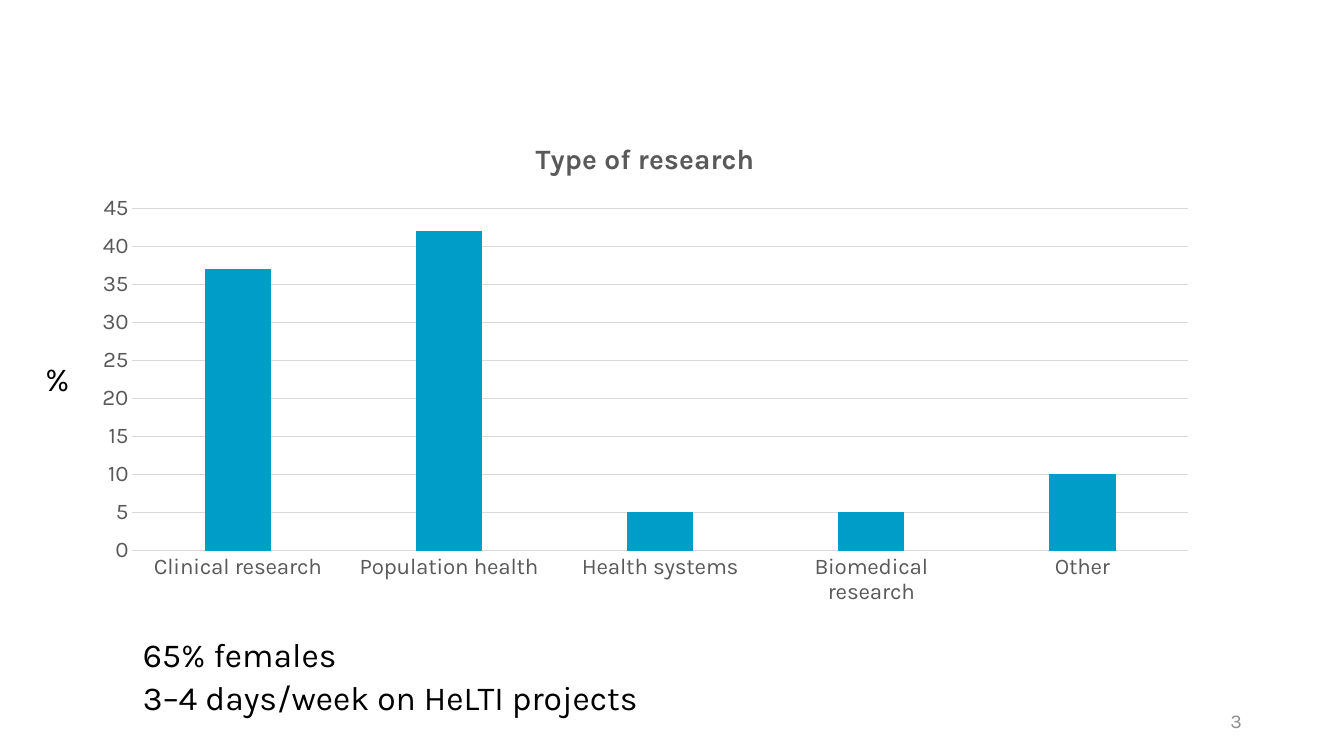
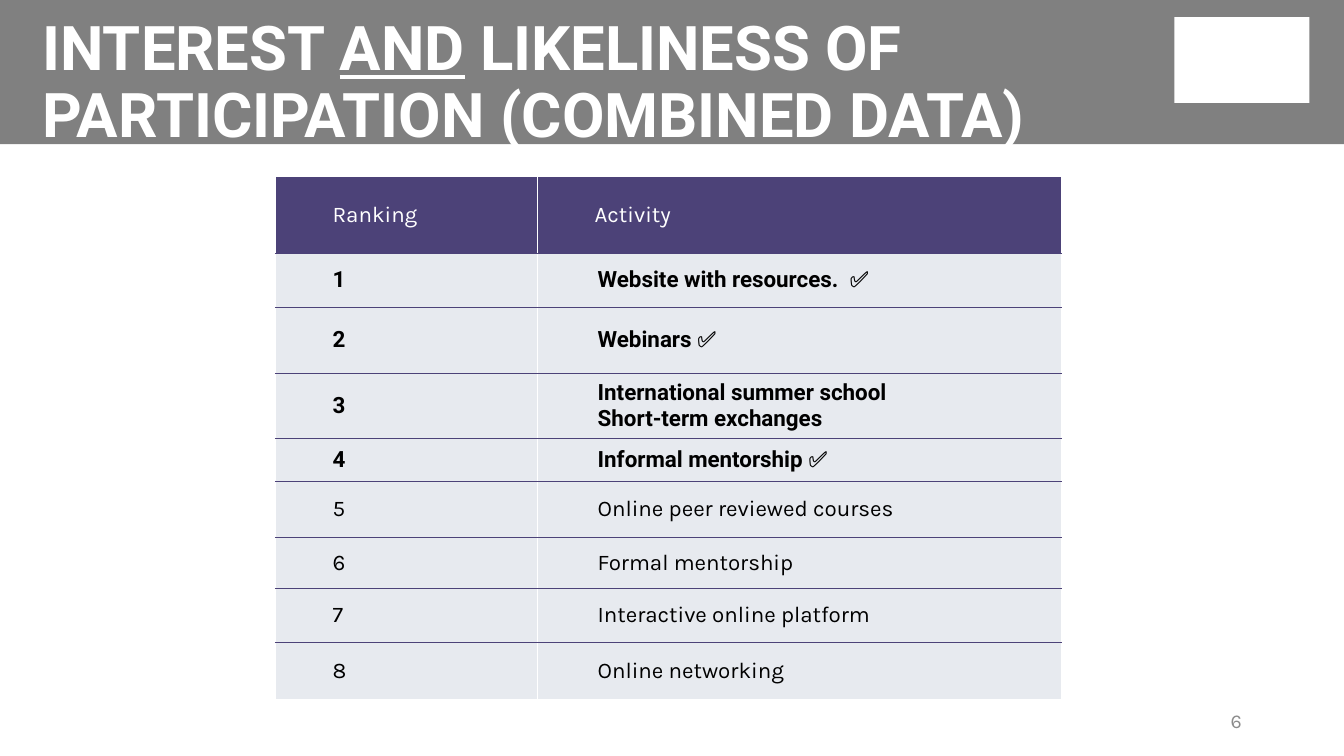
from lxml import etree
from pptx import Presentation
from pptx import util as u
from pptx.chart.data import CategoryChartData
from pptx.dml.color import RGBColor
from pptx.enum import chart as charts, shapes, text
from pptx.oxml.ns import qn

WIDTH, HEIGHT = u.Inches(13.33), u.Inches(7.5)
COLUMN, ROW = WIDTH / 40, HEIGHT / 30

WHITE, BLACK, GREY = "FFFFFF", "000000", "808080"
LABEL_GREY, GRID_GREY, NUMBER_GREY = "595959", "D9D9D9", "8C8C8C"
PURPLE, PALE, BLUE = "4C4278", "E7EAEF", "009DC8"
BODY_FONT, HEAVY_FONT = "Karla", "Roboto"
TITLE_ONLY, BLANK = 5, 6

RESEARCH = {
    "Clinical research": 37,
    "Population health": 42,
    "Health systems": 5,
    "Biomedical research": 5,
    "Other": 10,
}
# Row height in grid rows, then the activities that share the rank
ACTIVITIES = [
    (2.16, ["Website with resources.  ✅"]),
    (2.6, ["Webinars ✅"]),
    (2.6, ["International summer school", "Short-term exchanges"]),
    (1.68, ["Informal mentorship ✅"]),
    (2.24, ["Online peer reviewed courses"]),
    (2.04, ["Formal mentorship"]),
    (2.12, ["Interactive online platform"]),
    (2.28, ["Online networking"]),
]
TOP_RANKS = 4


def color(value):
    return RGBColor.from_string(value)


def place(left, top, width, height):
    """Turn grid columns and rows into slide lengths."""
    return (round(left * COLUMN), round(top * ROW),
            round(width * COLUMN), round(height * ROW))


def style(font, size, shade, name=BODY_FONT, bold=False):
    font.size, font.name, font.bold = u.Pt(size), name, bold
    font.color.rgb = color(shade)


def add_text(page, words, area, size=24, shade=BLACK, wrap=True,
             align=text.PP_ALIGN.LEFT, anchor=text.MSO_ANCHOR.TOP):
    frame = page.shapes.add_textbox(*place(*area)).text_frame
    frame.word_wrap, frame.vertical_anchor = wrap, anchor
    para = frame.paragraphs[0]
    para.text, para.alignment = words, align
    style(para.font, size, shade)


def add_page_number(page, number):
    add_text(page, number, (28.26, 27.8, 9, 1.6), 14, NUMBER_GREY,
             align=text.PP_ALIGN.RIGHT, anchor=text.MSO_ANCHOR.MIDDLE)


def add_block(page, area, fill):
    block = page.shapes.add_shape(shapes.MSO_SHAPE.RECTANGLE, *place(*area))
    block.shadow.inherit = False
    block.fill.solid()
    block.fill.fore_color.rgb = color(fill)
    block.line.fill.background()
    return block


def add_title_band(page, spans):
    """Put the grey band behind the title; spans are (words, underlined)."""
    title = page.shapes.title
    band = add_block(page, (0, 0, 40, 5.72), GREY)
    title._element.addprevious(band._element)
    title.left, title.top, title.width, title.height = place(0.96, 0.44, 34.5, 5.8)
    frame = title.text_frame
    frame.auto_size, frame.word_wrap = text.MSO_AUTO_SIZE.NONE, True
    frame.vertical_anchor = text.MSO_ANCHOR.MIDDLE
    para = frame.paragraphs[0]
    para.alignment, para.line_spacing = text.PP_ALIGN.LEFT, 0.9
    style(para.font, 44, WHITE, HEAVY_FONT, True)
    for words, underlined in spans:
        span = para.add_run()
        span.text, span.font.underline = words, underlined


def add_column_chart(page, name, values, area):
    data = CategoryChartData()
    data.categories = list(values)
    data.add_series(name, list(values.values()))
    chart = page.shapes.add_chart(charts.XL_CHART_TYPE.COLUMN_CLUSTERED,
                                  *place(*area), data).chart
    style(chart.font, 16, LABEL_GREY)
    chart.has_legend = False
    heading = chart.chart_title.text_frame.paragraphs[0]
    heading.text = name
    style(heading.font, 20, LABEL_GREY, bold=True)

    plot = chart.plots[0]
    plot.gap_width, plot.overlap, plot.vary_by_categories = 219, -27, False
    fill = plot.series[0].format.fill
    fill.solid()
    fill.fore_color.rgb = color(BLUE)

    for axis in (chart.category_axis, chart.value_axis):
        axis.major_tick_mark = axis.minor_tick_mark = charts.XL_TICK_MARK.NONE
        style(axis.tick_labels.font, 16, LABEL_GREY)
    scale = chart.value_axis
    scale.minimum_scale, scale.maximum_scale, scale.major_unit = 0, 45, 5
    scale.format.line.fill.background()
    for line in (chart.category_axis.format.line, scale.major_gridlines.format.line):
        line.color.rgb, line.width = color(GRID_GREY), u.Pt(0.75)


def add_border(cell, side, shade, points):
    line = etree.SubElement(cell._tc.get_or_add_tcPr(), qn(f"a:ln{side}"),
                            w=str(u.Pt(points)))
    fill = etree.SubElement(line, qn("a:solidFill"))
    etree.SubElement(fill, qn("a:srgbClr"), val=shade)


def fill_cell(cell, lines, fill, shade, font=BODY_FONT, bold=False,
              side_margin=0.07, bottom=PURPLE):
    for side, line_color, points in (("L", WHITE, 0.5), ("R", WHITE, 0.5),
                                     ("T", PURPLE, 0.25), ("B", bottom, 0.25)):
        add_border(cell, side, line_color, points)
    cell.fill.solid()
    cell.fill.fore_color.rgb = color(fill)
    cell.vertical_anchor = text.MSO_ANCHOR.MIDDLE
    cell.margin_left = cell.margin_right = u.Inches(side_margin)
    cell.margin_top = cell.margin_bottom = u.Inches(0.04)
    cell.text = "\n".join(lines)
    for para in cell.text_frame.paragraphs:
        para.level = 1
        properties = para._p.get_or_add_pPr()
        properties.set("marL", str(u.Inches(0.5)))
        properties.set("indent", "0")
        style(para.font, 16, shade, font, bold)


def add_ranking_table(page, left, top):
    widths = [7.8, 15.6]
    heights = [3] + [height for height, _ in ACTIVITIES]
    area = place(left, top, sum(widths), sum(heights))
    table = page.shapes.add_table(len(heights), len(widths), *area).table
    table.first_row = table.horz_banding = False
    for column, width in zip(table.columns, widths):
        column.width = round(width * COLUMN)
    for row, height in zip(table.rows, heights):
        row.height = round(height * ROW)

    for index, heading in enumerate(("Ranking", "Activity")):
        fill_cell(table.cell(0, index), [heading], PURPLE, WHITE)
    for rank, (_, activities) in enumerate(ACTIVITIES, 1):
        top_rank = rank <= TOP_RANKS
        look = {
            "font": HEAVY_FONT if top_rank else BODY_FONT,
            "bold": top_rank,
            "bottom": WHITE if rank == len(ACTIVITIES) else PURPLE,
        }
        fill_cell(table.cell(rank, 0), [str(rank)], PALE, BLACK, **look)
        fill_cell(table.cell(rank, 1), activities, PALE, BLACK,
                  side_margin=0.1, **look)


def add_research_page(deck):
    page = deck.slides.add_slide(deck.slide_layouts[BLANK])
    add_column_chart(page, "Type of research", RESEARCH, (2.37, 4.76, 33.66, 19.64))
    add_text(page, "%", (1.05, 14, 1.32, 2), wrap=False)
    add_text(page, "65% females", (3.96, 24.96, 6.42, 2), wrap=False)
    add_text(page, "3–4 days/week on HeLTI projects", (3.96, 26.68, 20.64, 2))
    add_page_number(page, "3")


def add_ranking_page(deck):
    page = deck.slides.add_slide(deck.slide_layouts[TITLE_ONLY])
    add_title_band(page, [("INTEREST ", False), ("AND", True),
                          (" LIKELINESS OF PARTICIPATION (COMBINED DATA)", False)])
    add_block(page, (34.95, 0.68, 4.02, 3.4), WHITE)
    add_ranking_table(page, 8.19, 7.04)
    add_page_number(page, "6")


def main():
    deck = Presentation()
    deck.slide_width, deck.slide_height = WIDTH, HEIGHT
    add_research_page(deck)
    add_ranking_page(deck)
    deck.save("out.pptx")


if __name__ == "__main__":
    main()
